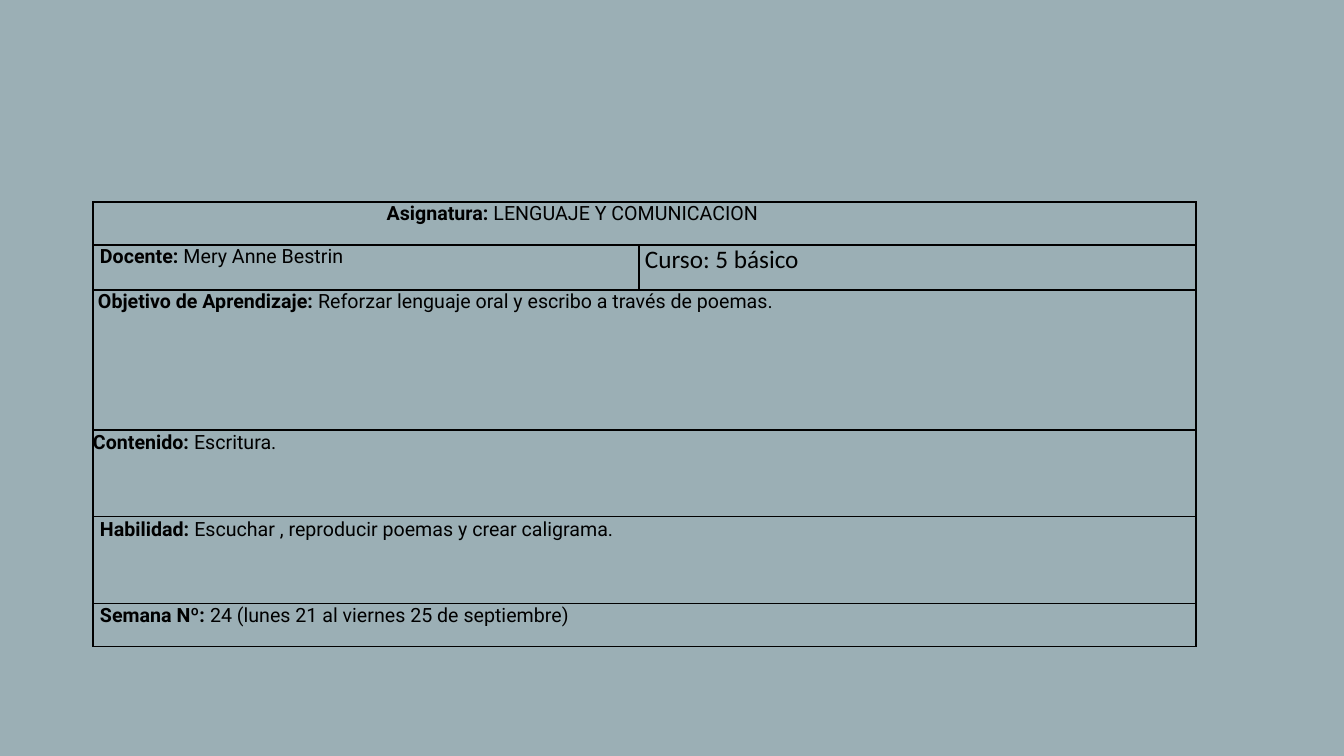
import pptx
import pptx.dml.color
import pptx.enum.text
import pptx.oxml
import pptx.oxml.ns
import pptx.util

SCALE = 914400 / 100.8
BLACK = "000000"


def px(n):
    return pptx.util.Emu(round(n * SCALE))


def color(code):
    return pptx.dml.color.RGBColor.from_string(code)


# Slide
deck = pptx.Presentation()
deck.slide_width, deck.slide_height = px(1344), px(756)
slide = deck.slides.add_slide(deck.slide_layouts[6])
back = slide.background.fill
back.solid()
back.fore_color.rgb = color("9BAFB5")

# Table grid
cols = [546, 557]
rows = [43, 45, 140, 87, 87, 43]
frame = slide.shapes.add_table(len(rows), len(cols), px(93), px(202),
                               px(sum(cols)), px(sum(rows)))
table = frame.table
table.first_row = table.horz_banding = False
for col, width in zip(table.columns, cols):
    col.width = px(width)
for row, height in zip(table.rows, rows):
    row.height = px(height)

# Borders, margins and fill
for cell in table.iter_cells():
    cell.margin_left = cell.margin_right = 0
    cell.margin_top = cell.margin_bottom = 0
    props = cell._tc.get_or_add_tcPr()
    for side in ("lnL", "lnR", "lnT", "lnB"):
        props.append(pptx.oxml.parse_xml(
            f'<a:{side} {pptx.oxml.ns.nsdecls("a")} w="12700"><a:solidFill>'
            f'<a:srgbClr val="{BLACK}"/></a:solidFill></a:{side}>'))
    cell.fill.background()

# Wide rows
for r in (0, 2, 3, 4, 5):
    table.cell(r, 0).merge(table.cell(r, 1))

# Text: row, column, bold label, plain value, indent, line spacing
exact = pptx.util.Pt(16.9)
texts = [
    (0, 0, "Asignatura: ", "LENGUAJE Y COMUNICACION", 0, exact),
    (1, 0, "Docente: ", "Mery Anne Bestrin", 7, exact),
    (1, 1, "", "Curso: 5 básico", 6, None),
    (2, 0, "Objetivo de Aprendizaje: ",
     "Reforzar lenguaje oral y escribo a través de poemas.", 5, None),
    (3, 0, "Contenido: ", "Escritura.", 0, 1.05),
    (4, 0, "Habilidad: ",
     "Escuchar , reproducir poemas y crear caligrama.", 7, 1.05),
    (5, 0, "Semana Nº: ", "24 (lunes 21 al viernes 25 de septiembre)", 7, exact),
]
for r, c, label, value, indent, space in texts:
    para = table.cell(r, c).text_frame.paragraphs[0]
    para.font.name = "Roboto" if label else "Calibri"
    para.font.size = pptx.util.Pt(14 if label else 18)
    para.font.color.rgb = color(BLACK)
    para.line_spacing = space
    para._p.get_or_add_pPr().set("marL", str(px(indent)))
    for text, bold in ((label, True), (value, False)):
        if text:
            run = para.add_run()
            run.text = text
            run.font.bold = bold

# Subject line is centred left of the middle
subject = table.cell(0, 0)
subject.margin_right = px(144)
subject.text_frame.paragraphs[0].alignment = pptx.enum.text.PP_ALIGN.CENTER

deck.save("out.pptx")
